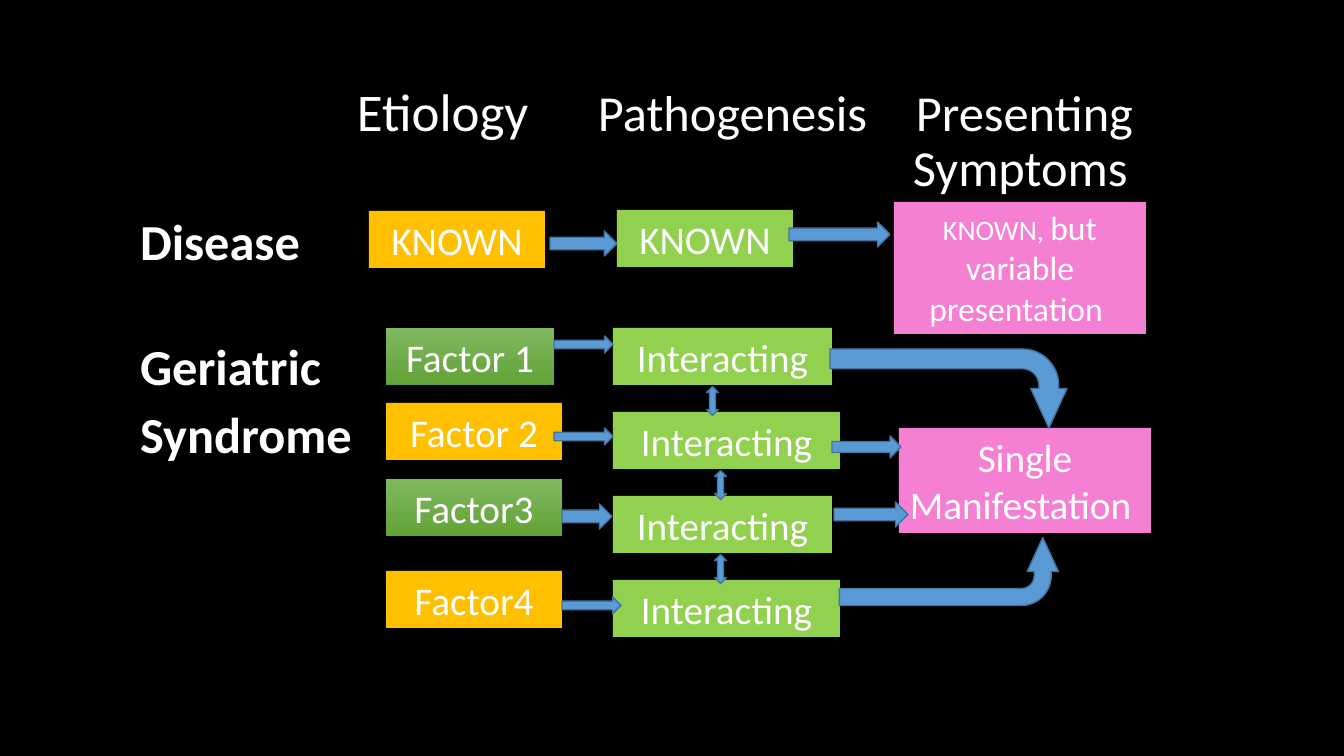
"""Build the slide comparing a disease with a geriatric syndrome."""
from dataclasses import dataclass

from pptx import Presentation, util as u
from pptx.dml.color import RGBColor
from pptx.enum import shapes, text
from pptx.oxml.ns import qn

KIND = shapes.MSO_SHAPE


@dataclass(frozen=True)
class Theme:
    """Colours and type sizes of the slide."""
    font: str = "Calibri"
    background: str = "000000"
    white: str = "FFFFFF"
    amber: str = "FFC000"
    lime: str = "92D050"
    pink: str = "F57FD3"
    green: tuple = ("81B861", "62A336")
    arrow: str = "5B9BD5"
    arrow_edge: str = "43739E"
    lead: float = 37.8
    heading: int = 36
    label: int = 28
    note: int = 24
    small: int = 20


def px(length):
    """Turn pixels, 1344 to the slide's width, into EMU."""
    return u.Emu(round(length * 12192000 / 1344))


def rgb(colour):
    """Return the colour for a hex code."""
    return RGBColor.from_string(colour)


class Board:
    """Draw elements on one slide in one style."""

    def __init__(self, deck, theme):
        """Add a slide with the title and content layout."""
        self.theme = theme
        self.slide = deck.slides.add_slide(deck.slide_layouts[1])
        fill = self.slide.background.fill
        fill.solid()
        fill.fore_color.rgb = rgb(theme.background)

    def style(self, paragraph, size, bold=False):
        """Set the font of a paragraph."""
        font = paragraph.font
        font.name, font.size, font.bold = self.theme.font, u.Pt(size), bold
        font.color.rgb = rgb(self.theme.white)

    def place(self, holder, left, top, width, height):
        """Move a placeholder and prepare its text frame."""
        holder.left, holder.top = px(left), px(top)
        holder.width, holder.height = px(width), px(height)
        frame = holder.text_frame
        frame.word_wrap = True
        frame.auto_size = text.MSO_AUTO_SIZE.NONE
        frame.vertical_anchor = text.MSO_ANCHOR.TOP
        return frame

    def headings(self, box, inset, lead, others, tabs, second_line, indent):
        """Write column headings at tab stops, the last one on two lines."""
        frame = self.place(self.slide.shapes.title, *box)
        frame.margin_left, frame.margin_right = px(inset), 0
        frame.margin_top = frame.margin_bottom = 0
        first, second = frame.paragraphs[0], frame.add_paragraph()
        stops = first._p.get_or_add_pPr().makeelement(qn("a:tabLst"), {})
        first._p.get_or_add_pPr().append(stops)
        for stop in tabs:
            stops.append(stops.makeelement(qn("a:tab"), {"pos": str(px(stop)), "algn": "l"}))
        opening = first.add_run()
        opening.text = lead
        opening.font.size = u.Pt(self.theme.lead)
        first.add_run().text = "".join("\t" + other for other in others)
        second.text = second_line
        second._p.get_or_add_pPr().set("marL", str(px(indent)))
        for paragraph in (first, second):
            paragraph.alignment = text.PP_ALIGN.LEFT
            paragraph.line_spacing = 0.9
            self.style(paragraph, self.theme.heading)

    def row_labels(self, box, labels):
        """Write the row labels, each with its space before in points."""
        frame = self.place(self.slide.placeholders[1], *box)
        for index, (label, gap) in enumerate(labels):
            paragraph = frame.add_paragraph() if index else frame.paragraphs[0]
            paragraph.text = label
            props = paragraph._p.get_or_add_pPr()
            props.set("marL", "0")
            props.set("indent", "0")
            props.append(props.makeelement(qn("a:buNone"), {}))
            paragraph.line_spacing = 0.9
            paragraph.space_before = u.Pt(gap)
            self.style(paragraph, self.theme.heading, bold=True)

    def shape(self, kind, left, top, width, height):
        """Add a preset shape without a shadow."""
        item = self.slide.shapes.add_shape(kind, px(left), px(top), px(width), px(height))
        item.shadow.inherit = False
        return item

    def box(self, label, colour, left, top, width, height=57, size=None, opening=None):
        """Add a filled box with a centred label and a smaller opening."""
        item = self.shape(KIND.RECTANGLE, left, top, width, height)
        item.line.fill.background()
        if isinstance(colour, tuple):
            item.fill.gradient()
            item.fill.gradient_angle = 270
            for stop, shade in zip(item.fill.gradient_stops, colour):
                stop.color.rgb = rgb(shade)
        else:
            item.fill.solid()
            item.fill.fore_color.rgb = rgb(colour)
        frame = item.text_frame
        frame.word_wrap = True
        frame.auto_size = text.MSO_AUTO_SIZE.SHAPE_TO_FIT_TEXT
        frame.vertical_anchor = text.MSO_ANCHOR.TOP
        paragraph = frame.paragraphs[0]
        paragraph.alignment = text.PP_ALIGN.CENTER
        if opening:
            start = paragraph.add_run()
            start.text = opening
            start.font.size = u.Pt(self.theme.small)
        paragraph.add_run().text = label
        self.style(paragraph, size or self.theme.label)

    def arrow(self, kind, place, rotation=0, adjustments=(), mirrored=False):
        """Add a block arrow."""
        item = self.shape(kind, *place)
        item.rotation = rotation
        for index, value in enumerate(adjustments):
            item.adjustments[index] = value
        if mirrored:
            item._element.spPr.find(qn("a:xfrm")).set("flipH", "1")
        item.fill.solid()
        item.fill.fore_color.rgb = rgb(self.theme.arrow)
        item.line.color.rgb = rgb(self.theme.arrow_edge)
        item.line.width = u.Pt(1)


def main():
    """Draw the slide and save it."""
    deck = Presentation()
    deck.slide_width, deck.slide_height = px(1344), px(756)
    theme = Theme()
    board = Board(deck, theme)

    board.headings((138, 86, 1050, 110), 219, "Etiology", ("Pathogenesis", "Presenting"),
                   (241, 559), "Symptoms", 556)
    board.row_labels((130, 212, 907, 499), (("Disease", 10), ("Geriatric", 50), ("Syndrome", 10)))

    board.box("KNOWN", theme.amber, 369, 211, 176)
    board.box("KNOWN", theme.lime, 617, 210, 176)
    board.box("but variable presentation ", theme.pink, 894, 202, 252, 132, theme.note, "KNOWN, ")
    factors = (("Factor 1", theme.green, 328, 168), ("Factor 2", theme.amber, 403, 176),
               ("Factor3", theme.green, 479, 176), ("Factor4", theme.amber, 571, 176))
    for factor, colour, top, width in factors:
        board.box(factor, colour, 386, top, width)
    for row in range(4):
        board.box("Interacting", theme.lime, 613, 328 + 84 * row, 227 if row % 2 else 219)
    board.box("Single Manifestation ", theme.pink, 899, 428, 252, 105)

    steps = ((550, 231, 67, 25), (789, 222, 101, 25),
             (554, 336, 59, 17), (554, 428, 59, 17), (562, 504, 50, 25), (562, 597, 59, 17),
             (832, 436, 69, 22), (834, 502, 74, 25))
    for step in steps:
        board.arrow(KIND.RIGHT_ARROW, step)
    board.arrow(KIND.BENT_ARROW, (909, 270, 79, 237), 90, (0.25, 0.23, 0.5, 0.46))
    board.arrow(KIND.BENT_ARROW, (915, 462, 68, 219), 90, (0.25, 0.23, 0.5, 0.44), mirrored=True)
    for row, left in enumerate((698, 706, 706)):
        board.arrow(KIND.LEFT_RIGHT_ARROW, (left, 395 + 84 * row, 29, 12), 90)

    deck.save("out.pptx")


if __name__ == "__main__":
    main()
